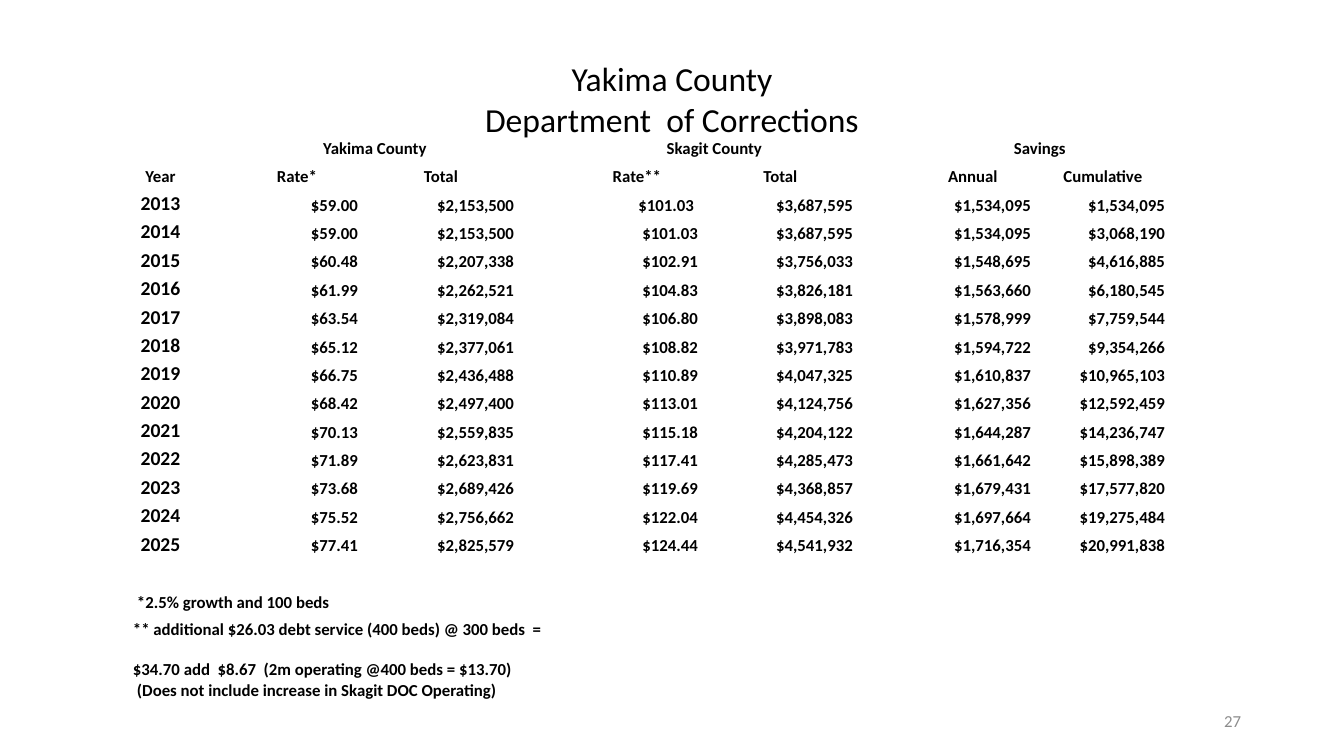
from pptx import Presentation
from pptx.dml.color import RGBColor
from pptx.enum.text import MSO_ANCHOR, MSO_AUTO_SIZE, PP_ALIGN
from pptx.oxml.ns import qn
from pptx.util import Emu, Pt

LEFT, CENTER, RIGHT = PP_ALIGN.LEFT, PP_ALIGN.CENTER, PP_ALIGN.RIGHT
BOTTOM, MIDDLE = MSO_ANCHOR.BOTTOM, MSO_ANCHOR.MIDDLE

# Content
TITLE = "Yakima County\vDepartment  of Corrections"
PAGE = "27"
GROUPS = {1: "Yakima County", 4: "Skagit County", 7: "Savings"}
HEADINGS = ("Year", "Rate*", "Total", "Rate**", "Total", "Annual", "Cumulative")
YEARS = [
    ("2013", "$59.00", "$2,153,500", "$101.03", "$3,687,595", "$1,534,095", "$1,534,095"),
    ("2014", "$59.00", "$2,153,500", "$101.03", "$3,687,595", "$1,534,095", "$3,068,190"),
    ("2015", "$60.48", "$2,207,338", "$102.91", "$3,756,033", "$1,548,695", "$4,616,885"),
    ("2016", "$61.99", "$2,262,521", "$104.83", "$3,826,181", "$1,563,660", "$6,180,545"),
    ("2017", "$63.54", "$2,319,084", "$106.80", "$3,898,083", "$1,578,999", "$7,759,544"),
    ("2018", "$65.12", "$2,377,061", "$108.82", "$3,971,783", "$1,594,722", "$9,354,266"),
    ("2019", "$66.75", "$2,436,488", "$110.89", "$4,047,325", "$1,610,837", "$10,965,103"),
    ("2020", "$68.42", "$2,497,400", "$113.01", "$4,124,756", "$1,627,356", "$12,592,459"),
    ("2021", "$70.13", "$2,559,835", "$115.18", "$4,204,122", "$1,644,287", "$14,236,747"),
    ("2022", "$71.89", "$2,623,831", "$117.41", "$4,285,473", "$1,661,642", "$15,898,389"),
    ("2023", "$73.68", "$2,689,426", "$119.69", "$4,368,857", "$1,679,431", "$17,577,820"),
    ("2024", "$75.52", "$2,756,662", "$122.04", "$4,454,326", "$1,697,664", "$19,275,484"),
    ("2025", "$77.41", "$2,825,579", "$124.44", "$4,541,932", "$1,716,354", "$20,991,838"),
]
GROWTH_NOTE = "*2.5% growth and 100 beds"
DEBT_NOTES = (
    "** additional $26.03 debt service (400 beds) @ 300 beds  =",
    "$34.70 add  $8.67  (2m operating @400 beds = $13.70)",
    "(Does not include increase in Skagit DOC Operating)",
)
COLORS = {"text": "000000", "page": "8C8C8C"}
FONT = "Calibri"
NO_STYLE_NO_GRID = "{2D5ABB26-0587-4C30-8999-92F81FD0307C}"

# Layout, in px
SLIDE_W, SLIDE_H = 1344, 756
TITLE_BOX = (0, 29, 1344, 115)
PAGE_BOX = (890, 701, 361, 40)
TABLE_LEFT, TABLE_TOP = 90, 126
COLUMN_WIDTHS = (141, 132, 156, 52, 132, 155, 52, 126, 134)
DATA_COLUMNS = (0, 1, 2, 4, 5, 7, 8)
GROUP_ROW_H, MIDDLE_ROWS_H, NOTES_ROW_H = 33, 454, 88
MIDDLE_ROWS = len(YEARS) + 3
FIGURE_MARGIN, NOTE_MARGIN, NOTE_INDENT = 5, 43, 4


def px(length):
    return Emu(round(length * 914400 / 100.8))


def style(paragraph, size, align, bold=False, color="text"):
    paragraph.alignment = align
    font = paragraph.font
    font.name, font.size, font.bold = FONT, Pt(size), bold
    font.color.rgb = RGBColor.from_string(COLORS[color])


def fill_cell(cell, lines, align=CENTER, size=12, left=1, right=1):
    cell.text = "\n".join(lines)
    cell.margin_left, cell.margin_right = px(left), px(right)
    for paragraph in cell.text_frame.paragraphs:
        style(paragraph, size, align, bold=True)


prs = Presentation()
prs.slide_width, prs.slide_height = px(SLIDE_W), px(SLIDE_H)
slide = prs.slides.add_slide(prs.slide_layouts[5])

# Title
title = slide.shapes.title
title.left, title.top, title.width, title.height = map(px, TITLE_BOX)
title.text_frame.text = TITLE
title.text_frame.auto_size = MSO_AUTO_SIZE.NONE
title.text_frame.vertical_anchor = BOTTOM
style(title.text_frame.paragraphs[0], 24, CENTER)

# Table grid, without borders so that the title above stays clear
row_heights = [GROUP_ROW_H] + [MIDDLE_ROWS_H / MIDDLE_ROWS] * MIDDLE_ROWS + [NOTES_ROW_H]
rates = slide.shapes.add_table(
    len(row_heights), len(COLUMN_WIDTHS), px(TABLE_LEFT), px(TABLE_TOP),
    px(sum(COLUMN_WIDTHS)), px(sum(row_heights))).table
rates.first_row = rates.horz_banding = False
rates._tbl.tblPr.find(qn("a:tableStyleId")).text = NO_STYLE_NO_GRID
for column, width in zip(rates.columns, COLUMN_WIDTHS):
    column.width = px(width)
for row, height in zip(rates.rows, row_heights):
    row.height = px(height)
for cell in rates.iter_cells():
    cell.fill.background()
    cell.vertical_anchor = BOTTOM
    cell.margin_left = cell.margin_right = cell.margin_top = px(1)
    cell.margin_bottom = 0
    # Empty cells keep the small size, so that rows do not grow
    cell.text_frame.paragraphs[0]._p.get_or_add_endParaRPr().set("sz", "1200")

# Headings
for col, group in GROUPS.items():
    rates.cell(0, col).merge(rates.cell(0, col + 1))
    fill_cell(rates.cell(0, col), [group])
for col, heading in zip(DATA_COLUMNS, HEADINGS):
    fill_cell(rates.cell(1, col), [heading])

# Years and figures
for row, (year, *figures) in enumerate(YEARS, start=2):
    fill_cell(rates.cell(row, 0), [year], size=14)
    for col, figure in zip(DATA_COLUMNS[1:], figures):
        fill_cell(rates.cell(row, col), [figure], RIGHT, right=FIGURE_MARGIN)
rates.cell(2, 4).margin_right = px(2 * FIGURE_MARGIN - 1)

# Notes
debt_row = len(row_heights) - 1
growth, debt = rates.cell(debt_row - 1, 0), rates.cell(debt_row, 0)
growth.merge(rates.cell(debt_row - 1, 2))
debt.merge(rates.cell(debt_row, 3))
fill_cell(growth, [GROWTH_NOTE], LEFT, left=NOTE_MARGIN + NOTE_INDENT)
fill_cell(debt, DEBT_NOTES, LEFT, left=NOTE_MARGIN)
debt_paragraphs = debt.text_frame.paragraphs
debt_paragraphs[1].space_before = Pt(14.6)
debt_paragraphs[2]._p.get_or_add_pPr().set("marL", str(px(NOTE_INDENT)))

# Page number
page = slide.shapes.add_textbox(*map(px, PAGE_BOX)).text_frame
page.word_wrap = True
page.vertical_anchor = MIDDLE
page.text = PAGE
style(page.paragraphs[0], 12, RIGHT, color="page")

prs.save("out.pptx")
